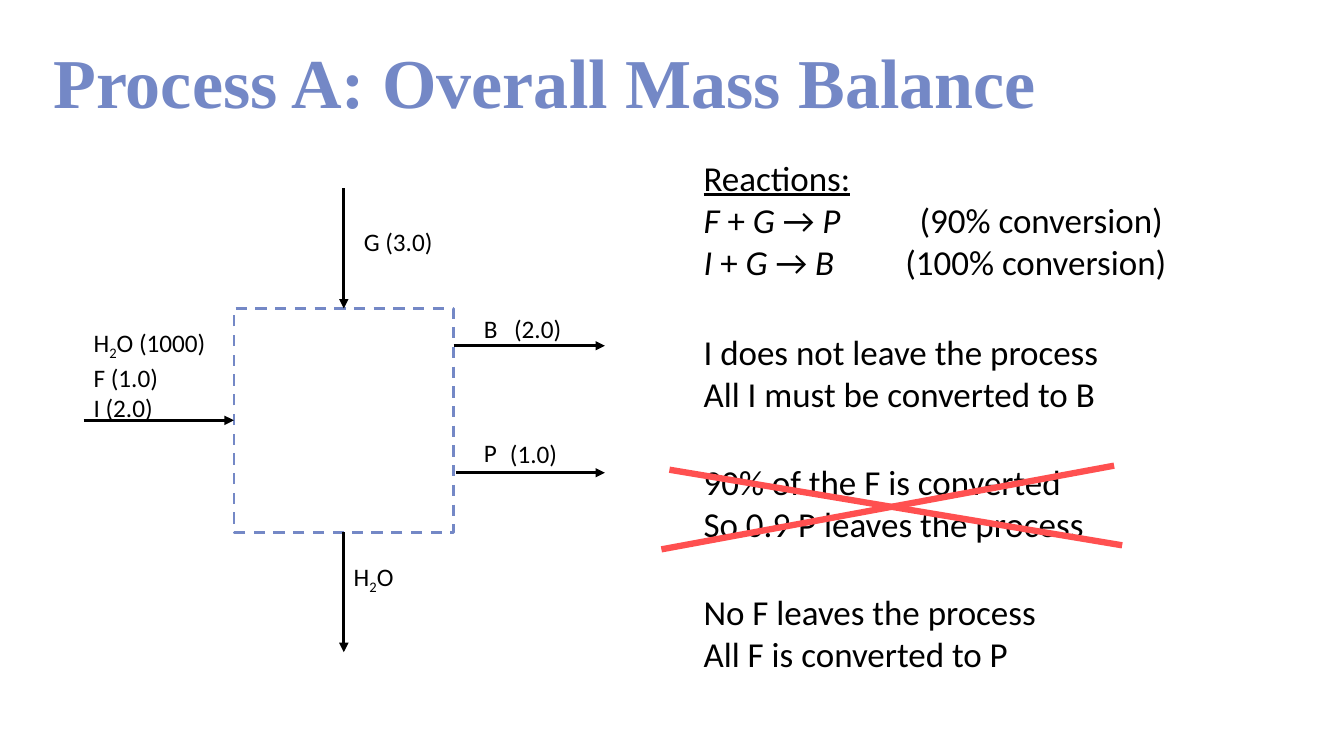
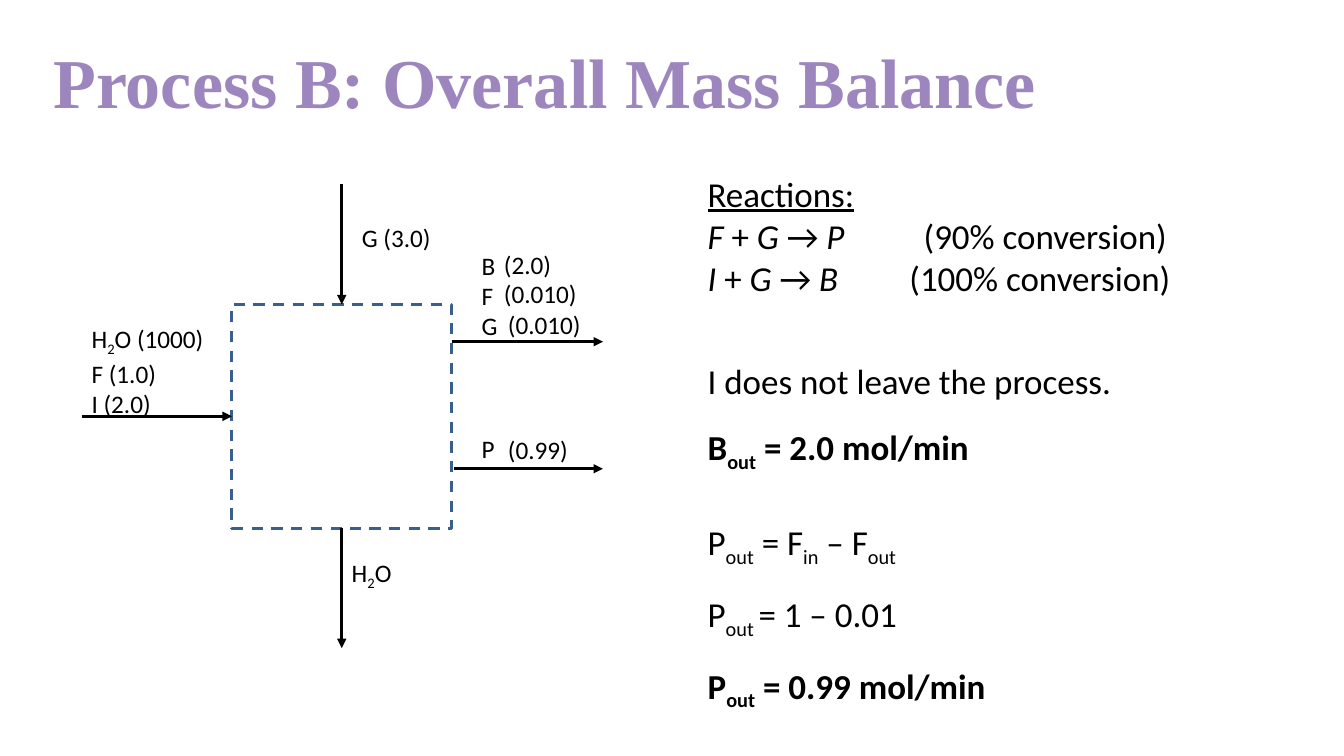
"""Build two slides comparing the overall mass balances of processes A and B."""
from dataclasses import dataclass

from lxml import etree
from pptx import Presentation
from pptx.dml.color import RGBColor
from pptx.enum.dml import MSO_LINE
from pptx.enum.shapes import MSO_CONNECTOR, MSO_SHAPE
from pptx.enum.text import MSO_ANCHOR, PP_ALIGN
from pptx.oxml.ns import qn
from pptx.util import Inches, Pt

DASH = MSO_LINE.DASH
STRAIGHT = MSO_CONNECTOR.STRAIGHT
RECTANGLE = MSO_SHAPE.RECTANGLE
TOP = MSO_ANCHOR.TOP
LEFT = PP_ALIGN.LEFT


@dataclass(frozen=True)
class Theme:
    """Hold the shared colours, fonts, type sizes and line widths."""
    ink: str = "000000"
    paper: str = "FFFFFF"
    strike: str = "FF5050"
    title_font: str = "Times New Roman"
    body_font: str = "Calibri"
    title_size: float = 50
    body_size: float = 25
    label_size: float = 18
    box_line: float = 2
    flow_line: float = 2.25
    strike_line: float = 4.5


THEME = Theme()
SLIDE_SIZE = (13.33, 7.5)
TITLE_AREA = (0.43, 0.33, 12.4, 0.94)
BOX_SIZE = (2.18, 2.22)

# Runs are (text, style): i italic, u underlined, b bold, s subscript.
REACTIONS = [
    [("Reactions:", "u")],
    [("F", "i"), (" + ", ""), ("G ", "i"), ("→ ", ""), ("P", "i"), ("          (90% conversion)", "")],
    [("I", "i"), (" + ", ""), ("G ", "i"), ("→ ", ""), ("B", "i"), ("         (100% conversion)", "")],
]
WATER = [("H", ""), ("2", "s"), ("O", "")]
FEED = [[*WATER, (" (1000)", "")], "F (1.0)", "I (2.0)"]
P_OUT = [("P", ""), ("out", "s")]
P_OUT_BOLD = [("P", "b"), ("out", "bs")]

# Offsets are measured from the top left corner of the process box.
FLOWS = [
    ((1.09, -1.19), (1.09, 0)),
    ((-1.49, 1.11), (0, 1.11)),
    ((2.18, 0.37), (3.68, 0.37)),
    ((2.2, 1.63), (3.68, 1.63)),
    ((1.09, 2.22), (1.09, 3.41)),
]
SHARED_LABELS = [
    ((1.19, -0.86), 1.19, ["G (3.0)"]),
    ((-1.49, 0.14), 1.5, FEED),
    ((2.38, 1.23), 0.3, ["P"]),
    ((1.09, 2.46), 0.92, [WATER]),
]

SLIDES = [
    {
        "title": "Process A: Overall Mass Balance",
        "title_color": "7488C6",
        "box_color": "7488C6",
        "box": (2.32, 3.06),
        "labels": [
            ((2.38, 0), 0.3, ["B"]),
            ((2.68, 0), 0.91, ["(2.0)"]),
            ((2.64, 1.24), 0.83, ["(1.0)"]),
        ],
        "notes_left": 6.88,
        "notes": [
            (1.5, 1, REACTIONS),
            (3.23, 1, ["I does not leave the process", "All I must be converted to B"]),
            (4.52, 1, ["90% of the F is converted", "So 0.9 P leaves the process"]),
            (5.81, 1, ["No F leaves the process", "All F is converted to P"]),
        ],
        "strikes": [((11.05, 4.62), (6.56, 5.45)), ((11.13, 5.41), (6.64, 4.66))],
    },
    {
        "title": "Process B: Overall Mass Balance",
        "title_color": "9D85BD",
        "box_color": "3A5F8C",
        "box": (2.3, 3.02),
        "labels": [
            ((2.38, -0.59), 0.3, ["B", "F", "G"]),
            ((2.6, -0.6), 0.91, ["(2.0)"]),
            ((2.6, -0.31), 1.04, ["(0.010)"]),
            ((2.64, 0), 1.04, ["(0.010)"]),
            ((2.64, 1.24), 1, ["(0.99)"]),
        ],
        "notes_left": 6.92,
        "notes": [
            (1.66, 1, REACTIONS),
            (3.31, 1.5, [
                "I does not leave the process.",
                [("B", "b"), ("out", "bs"), (" = 2.0 mol/min", "b")],
            ]),
            (4.88, 1.5, [
                [*P_OUT, (" = F", ""), ("in", "s"), (" – F", ""), ("out", "s")],
                [("P", ""), ("out ", "s"), ("= 1 – 0.01", "")],
                [*P_OUT_BOLD, (" = 0.99 mol/min", "b")],
            ]),
        ],
        "strikes": [],
    },
]


def rgb(color):
    return RGBColor.from_string(color)


def set_font(font, name, size, color):
    font.name = name
    font.size = Pt(size)
    font.color.rgb = rgb(color)


def shift(origin, offset):
    return origin[0] + offset[0], origin[1] + offset[1]


def add_title(slide, text, color):
    title = slide.shapes.title
    title.left, title.top, title.width, title.height = map(Inches, TITLE_AREA)
    frame = title.text_frame
    frame.text = text
    frame.vertical_anchor = TOP
    paragraph = frame.paragraphs[0]
    paragraph.alignment = LEFT
    paragraph.line_spacing = 1
    set_font(paragraph.font, THEME.title_font, THEME.title_size, color)
    paragraph.font.bold = True


def add_text(slide, position, width, lines, size, spacing=1):
    height = len(lines) * size * 1.22 * spacing / 72 + 0.1
    area = map(Inches, (*position, width, height))
    frame = slide.shapes.add_textbox(*area).text_frame
    frame.word_wrap = True
    for index, line in enumerate(lines):
        paragraph = frame.paragraphs[0] if index == 0 else frame.add_paragraph()
        paragraph.line_spacing = spacing
        set_font(paragraph.font, THEME.body_font, size, THEME.ink)
        for text, style in [(line, "")] if isinstance(line, str) else line:
            run = paragraph.add_run()
            run.text = text
            if "i" in style:
                run.font.italic = True
            if "u" in style:
                run.font.underline = True
            if "b" in style:
                run.font.bold = True
            if "s" in style:
                run.font._element.set("baseline", "-25000")


def add_line(slide, start, end, color, width, arrow=False):
    connector = slide.shapes.add_connector(STRAIGHT, *map(Inches, (*start, *end)))
    connector.line.color.rgb = rgb(color)
    connector.line.width = Pt(width)
    if arrow:
        etree.SubElement(connector.line._get_or_add_ln(), qn("a:tailEnd"), type="triangle")
    etree.SubElement(connector._element.spPr, qn("a:effectLst"))


def add_process(slide, box, color, labels):
    shape = slide.shapes.add_shape(RECTANGLE, *map(Inches, (*box, *BOX_SIZE)))
    shape.shadow.inherit = False
    shape.fill.solid()
    shape.fill.fore_color.rgb = rgb(THEME.paper)
    shape.line.color.rgb = rgb(color)
    shape.line.width = Pt(THEME.box_line)
    shape.line.dash_style = DASH
    for start, end in FLOWS:
        add_line(slide, shift(box, start), shift(box, end), THEME.ink, THEME.flow_line, arrow=True)
    for offset, width, lines in SHARED_LABELS + labels:
        add_text(slide, shift(box, offset), width, lines, THEME.label_size)


def main():
    presentation = Presentation()
    presentation.slide_width, presentation.slide_height = map(Inches, SLIDE_SIZE)
    title_only = presentation.slide_layouts[5]
    for content in SLIDES:
        slide = presentation.slides.add_slide(title_only)
        add_title(slide, content["title"], content["title_color"])
        add_process(slide, content["box"], content["box_color"], content["labels"])
        left = content["notes_left"]
        for top, spacing, lines in content["notes"]:
            add_text(slide, (left, top), SLIDE_SIZE[0] - left, lines, THEME.body_size, spacing)
        for start, end in content["strikes"]:
            add_line(slide, start, end, THEME.strike, THEME.strike_line)
    presentation.save("out.pptx")


if __name__ == "__main__":
    main()
